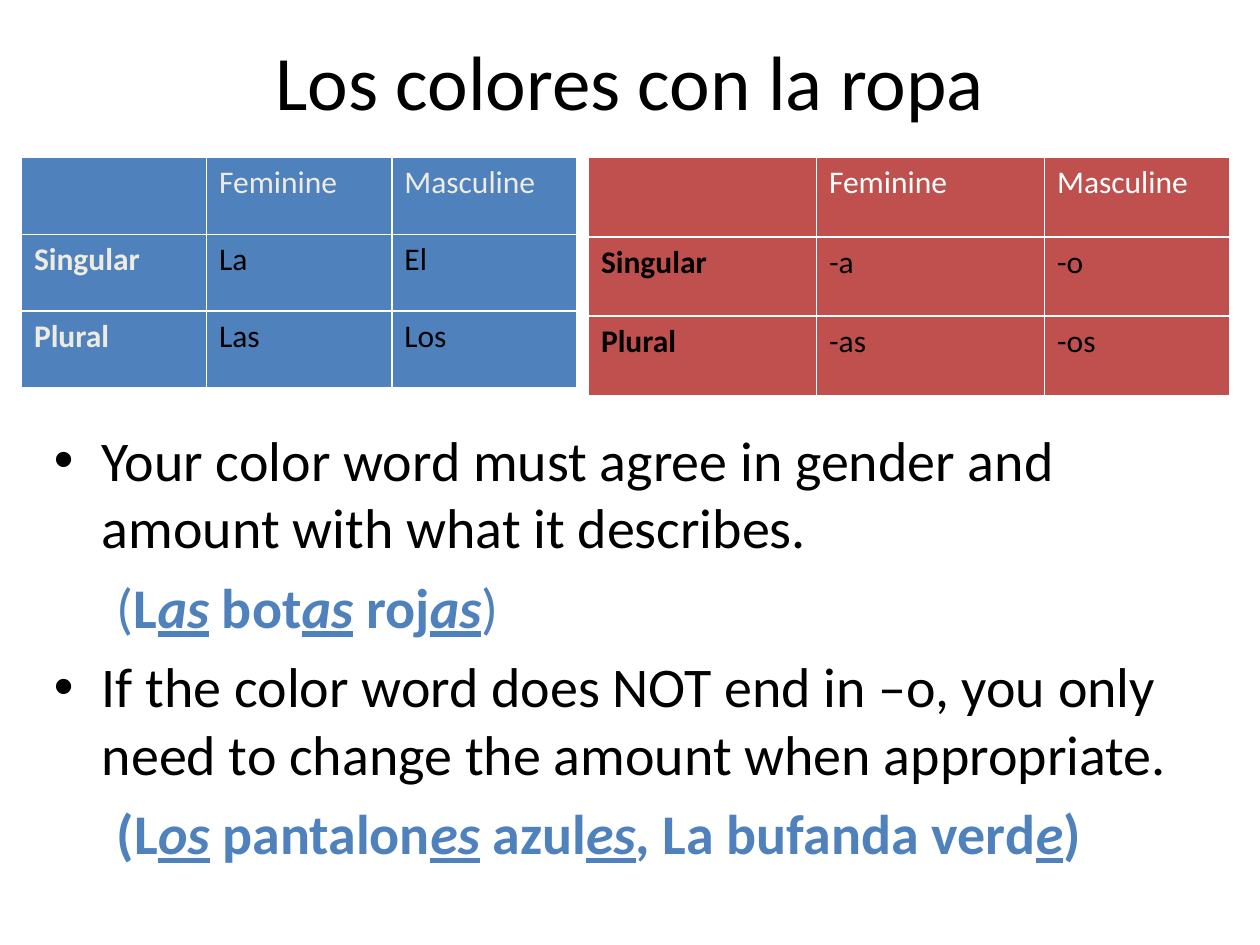
from lxml import etree
from pptx import Presentation
from pptx.dml.color import RGBColor
from pptx.enum.text import MSO_ANCHOR, PP_ALIGN
from pptx.oxml.ns import qn
from pptx.util import Inches, Pt

CENTER, MIDDLE = PP_ALIGN.CENTER, MSO_ANCHOR.MIDDLE
BLACK = RGBColor(0x00, 0x00, 0x00)
WHITE = RGBColor(0xFF, 0xFF, 0xFF)
CREAM = RGBColor(0xEE, 0xEC, 0xE1)
BLUE = RGBColor(0x4F, 0x81, 0xBD)
RED = RGBColor(0xC0, 0x50, 0x4D)


def add_run(p, text, size, color, bold=False, ending=False):
    r = p.add_run()
    r.text = text
    r.font.name = "Calibri"
    r.font.size = Pt(size)
    r.font.color.rgb = color
    r.font.bold = bold
    r.font.italic = ending
    r.font.underline = ending


def add_borders(cell):
    tc_pr = cell._tc.get_or_add_tcPr()
    for side in ("lnL", "lnR", "lnT", "lnB"):
        ln = etree.SubElement(tc_pr, qn(f"a:{side}"), w=str(Pt(1)))
        fill = etree.SubElement(ln, qn("a:solidFill"))
        etree.SubElement(fill, qn("a:srgbClr"), val=str(WHITE))


prs = Presentation()
prs.slide_width, prs.slide_height = Inches(10), Inches(7.5)
s = prs.slides.add_slide(prs.slide_layouts[6])

# Title
sp = s.shapes.add_textbox(Inches(0.75), Inches(0.01), Inches(8.5), Inches(1.25))
tf = sp.text_frame
tf.word_wrap = True
tf.vertical_anchor = MIDDLE
p = tf.paragraphs[0]
p.alignment = CENTER
add_run(p, "Los colores con la ropa", 44, BLACK)

# Rules, each followed by an example: (text, bold, stressed ending)
rules = [
    ("Your color word must agree in gender and amount with what it describes.",
     [("(", False, False), ("L", True, False), ("as", True, True),
      (" bot", True, False), ("as", True, True), (" roj", True, False),
      ("as", True, True), (")", False, False)]),
    ("If the color word does NOT end in –o, you only need to change the amount "
     "when appropriate.",
     [("(L", True, False), ("os", True, True), (" pantalon", True, False),
      ("es", True, True), (" azul", True, False), ("es", True, True),
      (", La bufanda verd", True, False), ("e", True, True),
      (")", True, False)]),
]
sp = s.shapes.add_textbox(Inches(0.33), Inches(3.33), Inches(9.5), Inches(3.58))
tf = sp.text_frame
tf.word_wrap = True
for i, (rule, example) in enumerate(rules):
    p = tf.add_paragraph() if i else tf.paragraphs[0]
    if i:
        p.space_before = Pt(7)
    p_pr = p._p.get_or_add_pPr()
    p_pr.set("marL", str(Inches(0.38)))
    p_pr.set("indent", str(Inches(-0.38)))
    etree.SubElement(p_pr, qn("a:buFont"), typeface="Arial")
    etree.SubElement(p_pr, qn("a:buChar"), char="•")
    add_run(p, rule, 32, BLACK)

    p = tf.add_paragraph()
    p.space_before = Pt(7)
    add_run(p, "\t", 32, BLUE)
    for text, bold, ending in example:
        add_run(p, text, 32, BLUE, bold, ending)

# Article and ending tables: left, column widths, row height, fill,
# header colour, row label colour, rows
header = ["", "Feminine", "Masculine"]
tables = [
    (0.17, [1.47, 1.47, 1.47], 0.61, BLUE, CREAM, CREAM,
     [header, ["Singular", "La", "El"], ["Plural", "Las", "Los"]]),
    (4.67, [1.81, 1.81, 1.47], 0.63, RED, WHITE, BLACK,
     [header, ["Singular", "-a", "-o"], ["Plural", "-as", "-os"]]),
]
for left, widths, height, fill, head_color, label_color, rows in tables:
    table = s.shapes.add_table(
        len(rows), len(widths), Inches(left), Inches(1.25),
        Inches(sum(widths)), Inches(height * len(rows))).table
    for column, width in zip(table.columns, widths):
        column.width = Inches(width)
    for i, row in enumerate(rows):
        table.rows[i].height = Inches(height)
        for j, text in enumerate(row):
            cell = table.cell(i, j)
            add_borders(cell)
            cell.fill.solid()
            cell.fill.fore_color.rgb = fill
            color = head_color if i == 0 else label_color if j == 0 else BLACK
            if text:
                add_run(cell.text_frame.paragraphs[0], text, 18, color, j == 0)

prs.save("out.pptx")
